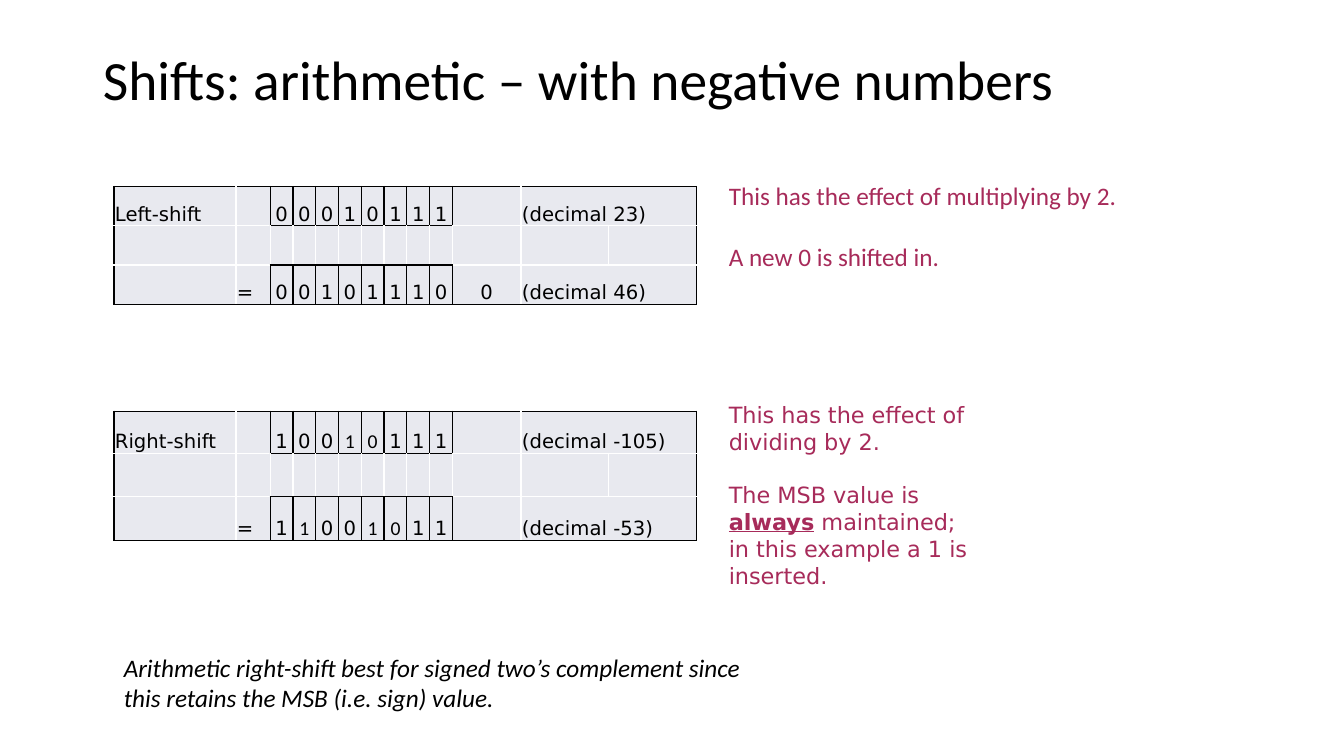
from lxml import etree
from pptx import Presentation
from pptx.dml.color import RGBColor
from pptx.enum import text
from pptx.oxml import ns
from pptx.util import Inches, Pt

BLACK, WHITE, CELL_GREY, PLUM = "000000", "FFFFFF", "E8E9EF", "A72B5A"
SANS, MONO_LOOK = "Calibri", "DejaVu Sans"

# Table grid: label, sign, eight bits, carry, two columns for the decimal value
BIT_COLUMNS = range(2, 10)
BIT_ROWS = (0, 2)
CARRY_COLUMN, DECIMAL_COLUMN = 10, 11
COLUMN_WIDTHS = [1.21, 0.34] + [1.81 / 8] * 8 + [0.68, 0.87, 0.87]


def color(hex_value):
    return RGBColor.from_string(hex_value)


def add_run(paragraph, content, hex_color, **formats):
    run = paragraph.add_run()
    run.text = content
    run.font.color.rgb = color(hex_color)
    for name, value in formats.items():
        setattr(run.font, name, value)


def set_title(slide, content):
    title = slide.shapes.title
    box = dict(left=Inches(0.92), top=Inches(0.4), width=Inches(11.5), height=Inches(1.45))
    for name, value in box.items():
        setattr(title, name, value)
    frame = title.text_frame
    frame.vertical_anchor = text.MSO_ANCHOR.TOP
    frame.margin_top = Inches(0.12)
    frame.auto_size = text.MSO_AUTO_SIZE.NONE
    paragraph = frame.paragraphs[0]
    paragraph.alignment = text.PP_ALIGN.LEFT
    paragraph.line_spacing = 0.9
    add_run(paragraph, content, BLACK, size=Pt(39.6), name=SANS)


def add_note(slide, box, paragraphs, hex_color, gap=0, **formats):
    """Each paragraph is a list of (text, extra formats) runs."""
    frame = slide.shapes.add_textbox(*map(Inches, box)).text_frame
    frame.word_wrap = True
    for index, runs in enumerate(paragraphs):
        paragraph = frame.add_paragraph() if index else frame.paragraphs[0]
        if index:
            paragraph.space_before = Pt(gap)
        for content, extra in runs:
            add_run(paragraph, content, hex_color, **formats, **extra)


def is_bit(row, column):
    return row in BIT_ROWS and column in BIT_COLUMNS


def set_borders(cell, row, column, row_count, column_count):
    """Black around the table and the bits, white elsewhere."""
    right = column + (cell.span_width if cell.is_merge_origin else 1)
    neighbours = {
        "lnL": (row, column - 1),
        "lnR": (row, right),
        "lnT": (row - 1, column),
        "lnB": (row + 1, column),
    }
    properties = cell._tc.get_or_add_tcPr()
    for index, (tag, (next_row, next_column)) in enumerate(neighbours.items()):
        outer = not (0 <= next_row < row_count and 0 <= next_column < column_count)
        dark = outer or is_bit(row, column) or is_bit(next_row, next_column)
        line = etree.Element(ns.qn("a:" + tag), w=str(Pt(1)))
        fill = etree.SubElement(line, ns.qn("a:solidFill"))
        etree.SubElement(fill, ns.qn("a:srgbClr"), val=BLACK if dark else WHITE)
        properties.insert(index, line)


def format_cell(cell, content, centered, font_name):
    cell.fill.solid()
    cell.fill.fore_color.rgb = color(CELL_GREY)
    cell.vertical_anchor = text.MSO_ANCHOR.BOTTOM
    cell.margin_left = cell.margin_right = cell.margin_top = Inches(0.01)
    cell.margin_bottom = 0
    paragraph = cell.text_frame.paragraphs[0]
    paragraph.alignment = text.PP_ALIGN.CENTER if centered else text.PP_ALIGN.LEFT
    if content:
        add_run(paragraph, content, BLACK, size=Pt(14), name=font_name)


def add_shift_table(slide, top, heights, before, after, calibri_bits=()):
    """before and after are (label, sign, bits, carry, decimal) rows."""
    rows, columns = len(heights), len(COLUMN_WIDTHS)
    frame = slide.shapes.add_table(
        rows, columns, Inches(1.13), Inches(top), Inches(5.79), Inches(sum(heights)))
    table = frame.table
    table.first_row = table.horz_banding = False
    for column, width in zip(table.columns, COLUMN_WIDTHS):
        column.width = Inches(width)
    for row, height in zip(table.rows, heights):
        row.height = Inches(height)
    contents = {}
    for row, (label, sign, bits, carry, decimal) in zip(BIT_ROWS, (before, after)):
        contents[row] = [label, sign, *bits, carry, decimal, ""]
        table.cell(row, DECIMAL_COLUMN).merge(table.cell(row, DECIMAL_COLUMN + 1))
    for row in range(rows):
        for column in range(columns):
            cell = table.cell(row, column)
            content = contents[row][column] if row in contents else ""
            centered = column in BIT_COLUMNS or column == CARRY_COLUMN
            font_name = SANS if (row, column) in calibri_bits else MONO_LOOK
            format_cell(cell, content, centered, font_name)
            set_borders(cell, row, column, rows, columns)


def main():
    presentation = Presentation()
    presentation.slide_width, presentation.slide_height = Inches(13.33), Inches(7.5)
    slide = presentation.slides.add_slide(presentation.slide_layouts[5])
    set_title(slide, "Shifts: arithmetic – with negative numbers")

    # Shift examples
    add_shift_table(
        slide, 1.85, (0.39, 0.39, 0.39),
        ("Left-shift", "", "00010111", "", "(decimal 23)"),
        ("", "=", "00101110", "0", "(decimal 46)"))
    add_shift_table(
        slide, 4.08, (0.42, 0.43, 0.43),
        ("Right-shift", "", "10010111", "", "(decimal -105)"),
        ("", "=", "11001011", "", "(decimal -53)"),
        calibri_bits={(0, 5), (0, 6), (2, 3), (2, 6), (2, 7)})

    # Explanations beside the tables
    add_note(
        slide, (7.13, 1.74, 6.67, 1.01),
        [[("This has the effect of multiplying by 2.", {})],
         [("A new 0 is shifted in.", {})]],
        PLUM, gap=22, size=Pt(18), name=SANS)
    add_note(
        slide, (7.13, 3.93, 2.66, 1.99),
        [[("This has the effect of dividing by 2.", {})],
         [("The MSB value is ", {}),
          ("always", {"bold": True, "underline": True}),
          (" maintained; in this example a 1 is inserted.", {})]],
        PLUM, gap=19, size=Pt(16), name=MONO_LOOK)

    # Closing remark
    add_note(
        slide, (1.13, 6.42, 6.67, 0.71),
        [[("Arithmetic right-shift best for signed two’s complement since "
           "this retains the MSB (i.e. sign) value.", {})]],
        BLACK, size=Pt(18), name=SANS, italic=True)

    presentation.save("out.pptx")


if __name__ == "__main__":
    main()
